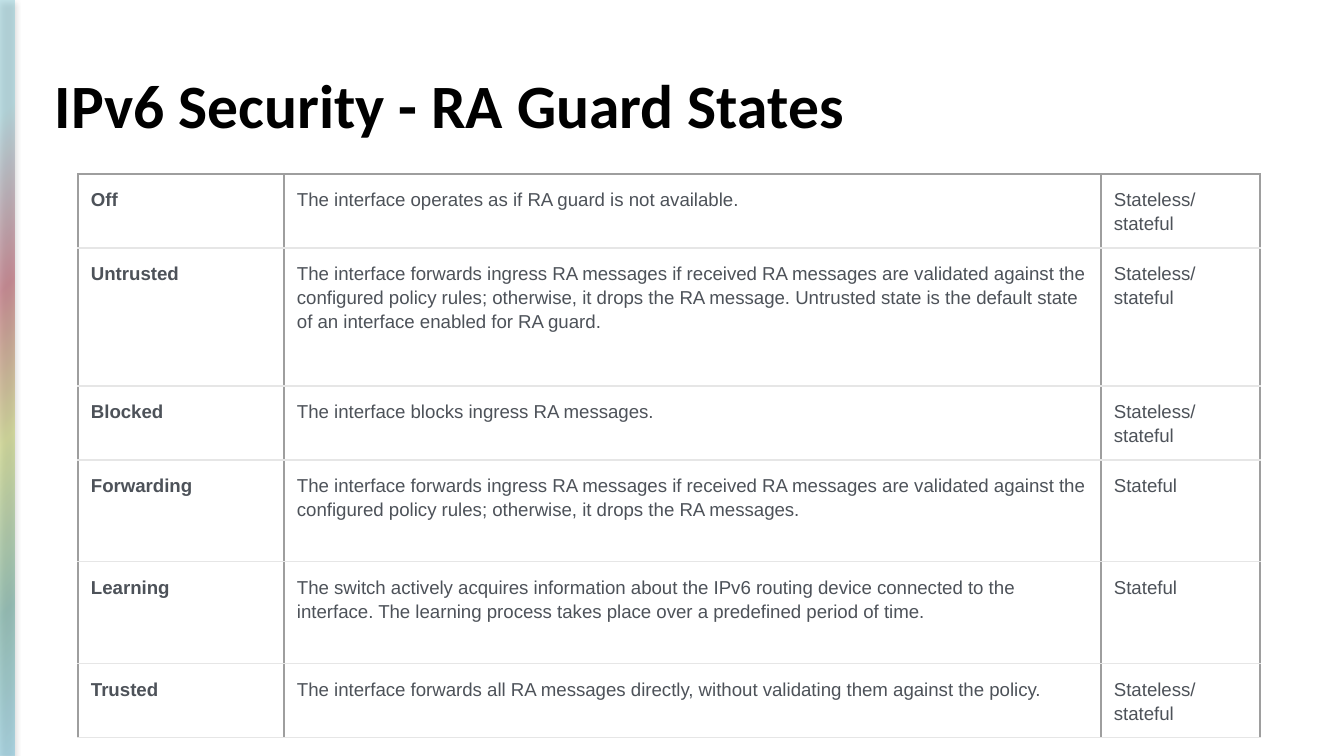
from typing import NamedTuple

import lxml.etree
import pptx
import pptx.dml.color
import pptx.enum.shapes
import pptx.enum.text
import pptx.oxml.ns
import pptx.util

PX = 914400 / 134.4
COLORS = {"title": "000000", "text": "4D5259", "edge": "9E9E9E", "rule": "E6E6E6",
          "aqua": "6CBFDC", "green": "459582", "lime": "BAC851", "red": "A42E40",
          "sky": "84C8D3", "shade": "000000"}
STOPS = [(0, "aqua"), (20, "green"), (42, "lime"), (62, "red"), (85, "sky"), (100, "sky")]
COLS = [206, 817, 159]
PAD = 13


class State(NamedTuple):
    name: str
    text: str
    mode: str
    high: int


BOTH = "Stateless/stateful"
STATES = [
    State("Off", "The interface operates as if RA guard is not available.", BOTH, 74),
    State("Untrusted", "The interface forwards ingress RA messages if received RA messages are "
          "validated against the configured policy rules; otherwise, it drops the RA message. "
          "Untrusted state is the default state of an interface enabled for RA guard.", BOTH, 138),
    State("Blocked", "The interface blocks ingress RA messages.", BOTH, 74),
    State("Forwarding", "The interface forwards ingress RA messages if received RA messages are "
          "validated against the configured policy rules; otherwise, it drops the RA messages.",
          "Stateful", 102),
    State("Learning", "The switch actively acquires information about the IPv6 routing device "
          "connected to the interface. The learning process takes place over a predefined "
          "period of time.", "Stateful", 102),
    State("Trusted", "The interface forwards all RA messages directly, without validating them "
          "against the policy.", BOTH, 74),
]


def emu(px: int) -> int:
    return round(px * PX)


def rgb(name: str) -> pptx.dml.color.RGBColor:
    return pptx.dml.color.RGBColor.from_string(COLORS[name])


def node(host, tag: str, **attrs):
    values = {key: str(val) for key, val in attrs.items()}
    return lxml.etree.SubElement(host, pptx.oxml.ns.qn("a:" + tag), values)


def tint(host, name: str, alpha: int) -> None:
    node(node(host, "srgbClr", val=COLORS[name]), "alpha", val=alpha * 1000)


def style(para, face: str, size: int, color: str, bold: bool) -> None:
    font = para.font
    font.name, font.size, font.bold = face, pptx.util.Pt(size), bold
    font.color.rgb = rgb(color)


def add_bar(slide) -> None:
    bar = slide.shapes.add_shape(pptx.enum.shapes.MSO_SHAPE.RECTANGLE, 0, 0, emu(15), emu(756))
    bar.shadow.inherit = False
    props = bar._element.spPr
    # Radial gradient centred on the lower right corner
    grad = node(props, "gradFill", rotWithShape=1)
    props.insert(2, grad)
    stops = node(grad, "gsLst")
    for pos, name in STOPS:
        tint(node(stops, "gs", pos=pos * 1000), name, 48)
    node(node(grad, "path", path="circle"), "fillToRect", l=100000, t=100000)
    bar.line.fill.background()
    # Soft shadow
    glow = node(props.find(pptx.oxml.ns.qn("a:effectLst")), "outerShdw", blurRad=39370,
                dist=22860, dir=5400000, rotWithShape=0)
    tint(glow, "shade", 33)
    slide.shapes._spTree.insert(2, bar._element)


def add_title(slide, text: str) -> None:
    title = slide.shapes.title
    title.left, title.top, title.width, title.height = map(emu, (46, 66, 1253, 85))
    frame = title.text_frame
    frame.text = text
    frame.auto_size = pptx.enum.text.MSO_AUTO_SIZE.NONE
    frame.vertical_anchor = pptx.enum.text.MSO_ANCHOR.MIDDLE
    frame.margin_left = frame.margin_right = emu(9)
    frame.margin_top = frame.margin_bottom = emu(5)
    para = frame.paragraphs[0]
    para.alignment = pptx.enum.text.PP_ALIGN.LEFT
    para.line_spacing = 0.9
    style(para, "Calibri", 33, "title", True)


def set_cell(cell, text: str, bold: bool, top: str) -> None:
    cell.text = text
    cell.margin_left = cell.margin_right = cell.margin_top = cell.margin_bottom = emu(PAD)
    para = cell.text_frame.paragraphs[0]
    para.line_spacing = 1.15
    para.space_after = pptx.util.Pt(12)
    style(para, "Arial", 10, "text", bold)
    props = cell._tc.get_or_add_tcPr()
    for side, name in (("L", "edge"), ("R", "edge"), ("T", top), ("B", "rule")):
        line = node(props, "ln" + side, w=9525)
        node(node(line, "solidFill"), "srgbClr", val=COLORS[name])
    cell.fill.background()


def add_grid(slide) -> None:
    high = sum(state.high for state in STATES)
    grid = slide.shapes.add_table(len(STATES), len(COLS), emu(78), emu(174),
                                  emu(sum(COLS)), emu(high)).table
    grid.first_row = grid.horz_banding = False
    for col, wide in zip(grid.columns, COLS):
        col.width = emu(wide)
    for i, state in enumerate(STATES):
        grid.rows[i].height = emu(state.high)
        for j, text in enumerate(state[:3]):
            set_cell(grid.cell(i, j), text, j == 0, "rule" if i else "edge")


def main() -> None:
    deck = pptx.Presentation()
    deck.slide_width, deck.slide_height = emu(1344), emu(756)
    slide = deck.slides.add_slide(deck.slide_layouts[5])
    add_bar(slide)
    add_title(slide, "IPv6 Security - RA Guard States")
    add_grid(slide)
    deck.save("out.pptx")


if __name__ == "__main__":
    main()
